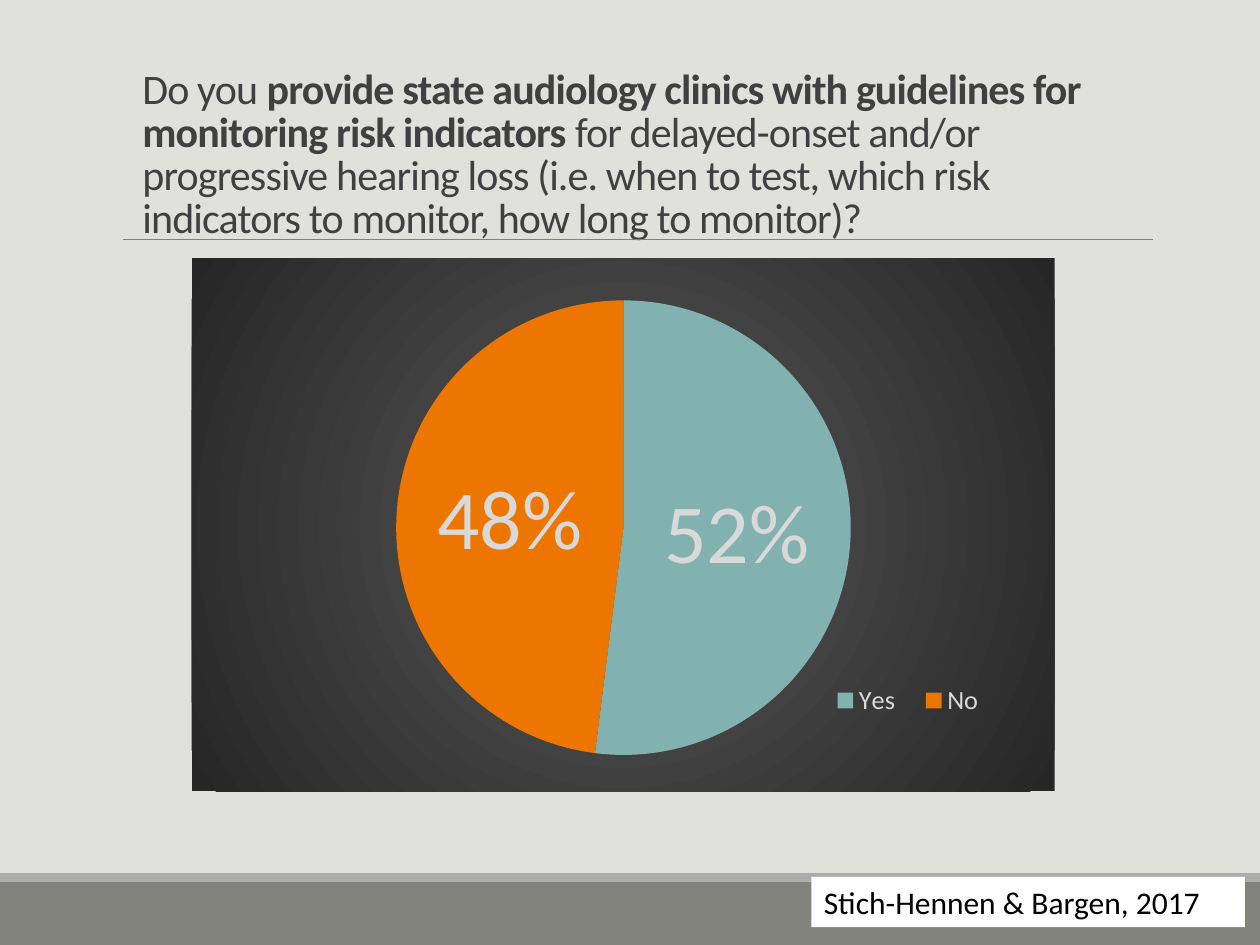
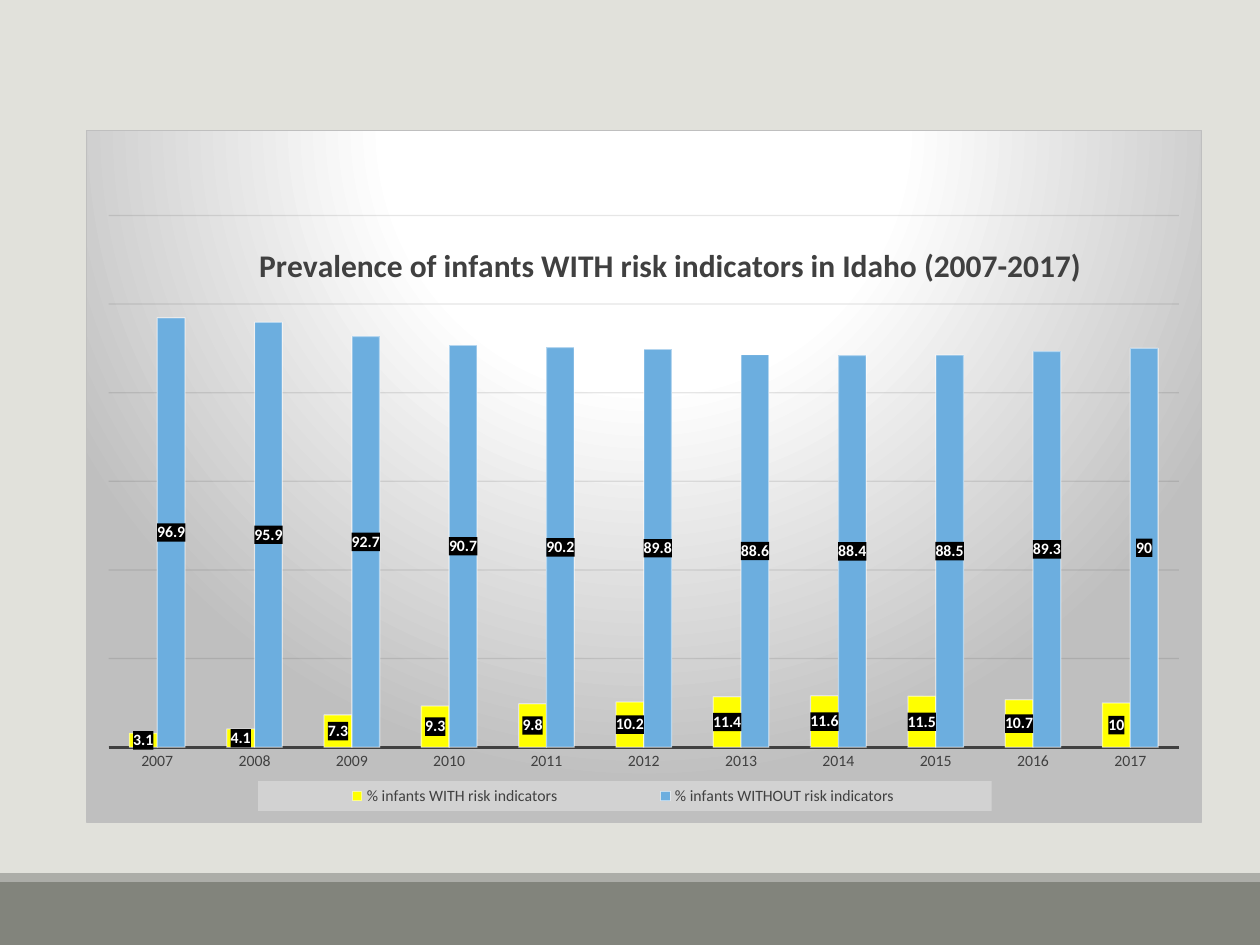
from lxml.etree import SubElement
from pptx import Presentation
from pptx.chart.data import CategoryChartData
from pptx.dml.color import RGBColor
from pptx.enum.chart import XL_CHART_TYPE, XL_LABEL_POSITION, XL_LEGEND_POSITION, XL_TICK_MARK
from pptx.enum.shapes import MSO_CONNECTOR, MSO_SHAPE
from pptx.enum.text import MSO_ANCHOR, MSO_AUTO_SIZE, PP_ALIGN
from pptx.oxml import parse_xml
from pptx.oxml.ns import nsdecls, qn
from pptx.util import Inches, Pt

FONT = "Calibri"
COLORS = {
    "page": "E1E1DB", "band": "82847C", "stripe": "ACADA8", "rule": "808080",
    "text": "404040", "white": "FFFFFF", "black": "000000", "pale": "D9D9D9",
    "yes": "82B2B0", "no": "EC7600", "with": "FFFF00", "without": "6CAEDF",
    "dark_center": "595959", "dark_edge": "262626", "silver": "BFBFBF",
    "grid": "0D0D0D", "legend": "F2F2F2",
}
BANDS = [("band", (0, 7, 10, 0.5)), ("stripe", (0, 6.93, 10, 0.07))]

QUESTION = [
    ("Do you ", False),
    ("provide state audiology clinics with guidelines for monitoring risk indicators ", True),
    ("for delayed-onset and/or progressive hearing loss (i.e. when to test, "
     "which risk indicators to monitor, how long to monitor)?", False),
]
CITATION = "Stich-Hennen & Bargen, 2017"
ANSWERS = {"Yes ": (52, "yes"), "No": (48, "no")}

PREVALENCE_TITLE = "Prevalence of infants WITH risk indicators in Idaho (2007-2017)"
YEARS = [str(year) for year in range(2007, 2018)]
PREVALENCE = [
    ("% infants WITH risk indicators ", "with",
     (3.1, 4.1, 7.3, 9.3, 9.8, 10.2, 11.4, 11.6, 11.5, 10.7, 10)),
    ("% infants WITHOUT risk indicators ", "without",
     (96.9, 95.9, 92.7, 90.7, 90.2, 89.8, 88.6, 88.4, 88.5, 89.3, 90)),
]


def rgb(name):
    return RGBColor.from_string(COLORS[name])


def set_font(font, color, **values):
    font.name = FONT
    font.color.rgb = rgb(color)
    for name, value in values.items():
        setattr(font, name, value)


def add_box(page, color, place):
    box = page.shapes.add_shape(MSO_SHAPE.RECTANGLE, *map(Inches, place))
    box.shadow.inherit = False
    box.fill.solid()
    box.fill.fore_color.rgb = rgb(color)
    box.line.fill.background()
    return box


def add_page(deck, layout_number):
    page = deck.slides.add_slide(deck.slide_layouts[layout_number])
    for color, place in BANDS:
        add_box(page, color, place)
    return page


def add_title(page, spans):
    rule = page.shapes.add_connector(
        MSO_CONNECTOR.STRAIGHT, *map(Inches, (0.98, 1.9, 9.15, 1.9)))
    rule.line.color.rgb = rgb("rule")
    rule.line.width = Pt(0.5)
    SubElement(rule.element.spPr, qn("a:effectLst"))

    title = page.shapes.title
    title.left, title.top, title.width, title.height = map(Inches, (1.03, 0.4, 7.95, 1.57))
    frame = title.text_frame
    frame.word_wrap = True
    frame.auto_size = MSO_AUTO_SIZE.NONE
    frame.vertical_anchor = MSO_ANCHOR.BOTTOM
    para = frame.paragraphs[0]
    para.alignment = PP_ALIGN.LEFT
    para.line_spacing = 0.85
    for text, bold in spans:
        span = para.add_run()
        span.text = text
        set_font(span.font, "text", size=Pt(24), bold=bold)
        span.font._element.set("spc", "-50")


def add_citation(page, text):
    box = add_box(page, "white", (6.44, 6.96, 3.44, 0.4))
    box.text_frame.word_wrap = True
    para = box.text_frame.paragraphs[0]
    para.alignment = PP_ALIGN.LEFT
    span = para.add_run()
    span.text = text
    set_font(span.font, "black", size=Pt(18))


def solid_fill(color, alpha=100):
    return (f'<a:solidFill><a:srgbClr val="{COLORS[color]}">'
            f'<a:alpha val="{alpha * 1000}"/></a:srgbClr></a:solidFill>')


def shape_properties(content):
    return parse_xml(f'<c:spPr {nsdecls("c", "a")}>{content}</c:spPr>')


def set_backdrop(chart, stops, center, border=None):
    colors = "".join(f'<a:gs pos="{position * 1000}"><a:srgbClr val="{COLORS[color]}"/></a:gs>'
                     for position, color in stops)
    edges = " ".join(f'{edge}="{value * 1000}"' for edge, value in zip("ltrb", center))
    line = solid_fill(border) if border else "<a:noFill/>"
    chart.element.find(qn("c:chart")).addnext(shape_properties(
        f'<a:gradFill><a:gsLst>{colors}</a:gsLst><a:path path="circle">'
        f'<a:fillToRect {edges}/></a:path></a:gradFill><a:ln w="9525">{line}</a:ln>'))


def set_layout(parent, inner=False, **place):
    for old in parent.findall(qn("c:layout")):
        parent.remove(old)
    target = '<c:layoutTarget val="inner"/>' if inner else ""
    modes = "".join(f'<c:{side}Mode val="edge"/>' for side in "xy")
    values = "".join(f'<c:{side} val="{value}"/>' for side, value in place.items())
    layout = parse_xml(f'<c:layout {nsdecls("c")}><c:manualLayout>{target}{modes}{values}'
                       '</c:manualLayout></c:layout>')
    overlay = parent.find(qn("c:overlay"))
    if overlay is None:
        parent.insert(0, layout)
    else:
        overlay.addprevious(layout)


def add_chart(page, kind, place, categories, series, plot_place):
    data = CategoryChartData()
    data.categories = categories
    for name, values in series:
        data.add_series(name, values)
    chart = page.shapes.add_chart(kind, *map(Inches, place), data).chart
    set_font(chart.font, "black", size=Pt(10))
    chart.has_title = False
    set_layout(next(chart.element.iter(qn("c:plotArea"))), inner=True, **plot_place)
    return chart


def add_legend(chart, color, size, place):
    chart.has_legend = True
    legend = chart.legend
    legend.position = XL_LEGEND_POSITION.BOTTOM
    legend.include_in_layout = False
    set_font(legend.font, color, size=Pt(size))
    element = next(chart.element.iter(qn("c:legend")))
    set_layout(element, **place)
    return element


def add_labels(series, color, size, percent=False, bold=False):
    labels = series.data_labels
    labels.show_percentage = percent
    labels.show_value = not percent
    labels.position = XL_LABEL_POSITION.CENTER
    if percent:
        labels.number_format = "0%"
        labels.number_format_is_linked = False
    set_font(labels.font, color, size=Pt(size), bold=bold)


def add_answer_chart(page):
    chart = add_chart(
        page, XL_CHART_TYPE.PIE, (1.52, 2.05, 6.85, 4.23), list(ANSWERS),
        [("Series 1", [value for value, _ in ANSWERS.values()])],
        dict(x=0.215, y=0.079, w=0.571, h=0.853))
    set_backdrop(chart, [(0, "dark_center"), (100, "dark_edge")], (50, 50, 50, 50))
    add_legend(chart, "pale", 15, dict(x=0.73, y=0.79, w=0.2, h=0.08))
    chart.plots[0].vary_by_categories = True
    answers = chart.plots[0].series[0]
    for index, (_, color) in enumerate(ANSWERS.values()):
        fill = answers.points[index].format.fill
        fill.solid()
        fill.fore_color.rgb = rgb(color)
    add_labels(answers, "pale", 48, percent=True)


def style_axes(chart):
    years = chart.category_axis
    years.major_tick_mark = XL_TICK_MARK.NONE
    years.format.line.color.rgb = rgb("text")
    years.format.line.width = Pt(1.5)
    set_font(years.tick_labels.font, "text", size=Pt(9))

    percent = chart.value_axis
    for name, value in dict(minimum_scale=0, maximum_scale=120, major_unit=20,
                            has_major_gridlines=True, visible=False).items():
        setattr(percent, name, value)
    next(chart.element.iter(qn("c:majorGridlines"))).append(
        shape_properties(f'<a:ln w="9525">{solid_fill("grid", 10)}</a:ln>'))


def add_prevalence_chart(page):
    chart = add_chart(
        page, XL_CHART_TYPE.COLUMN_CLUSTERED, (0.68, 1.03, 8.86, 5.5), YEARS,
        [(name, values) for name, _, values in PREVALENCE],
        dict(x=0.02, y=0.123, w=0.96, h=0.769))
    set_backdrop(chart, [(0, "white"), (39, "white"), (100, "silver")],
                 (50, -80, 50, 180), "silver")

    chart.has_title = True
    span = chart.chart_title.text_frame.paragraphs[0].add_run()
    span.text = PREVALENCE_TITLE
    set_font(span.font, "text", size=Pt(18), bold=True)
    set_layout(next(chart.element.iter(qn("c:title"))), x=0.15, y=0.155)

    legend = add_legend(chart, "text", 9, dict(x=0.154, y=0.941, w=0.658, h=0.043))
    legend.find(qn("c:overlay")).addnext(shape_properties(solid_fill("legend", 39)))
    style_axes(chart)

    plot = chart.plots[0]
    plot.gap_width = 150
    plot.overlap = 0
    plot.vary_by_categories = False
    for series, (_, color, _) in zip(plot.series, PREVALENCE):
        series.format.fill.solid()
        series.format.fill.fore_color.rgb = rgb(color)
        series.format.line.color.rgb = rgb("white")
        series.format.line.width = Pt(0.75)
        add_labels(series, "white", 9, bold=True)
    for element in chart.element.iter(qn("c:ser")):
        outline = element.find(qn("c:spPr")).find(qn("a:ln"))
        SubElement(next(outline.iter(qn("a:srgbClr"))), qn("a:alpha"), val="50000")
        label_text = element.find(qn("c:dLbls")).find(qn("c:txPr"))
        label_text.addprevious(shape_properties(solid_fill("black")))


def main():
    deck = Presentation()
    deck.slide_width, deck.slide_height = Inches(10), Inches(7.5)
    background = deck.slide_master.background.fill
    background.solid()
    background.fore_color.rgb = rgb("page")

    guidelines_page = add_page(deck, 5)
    add_title(guidelines_page, QUESTION)
    add_answer_chart(guidelines_page)
    add_citation(guidelines_page, CITATION)

    prevalence_page = add_page(deck, 6)
    add_prevalence_chart(prevalence_page)
    deck.save("out.pptx")


if __name__ == "__main__":
    main()
